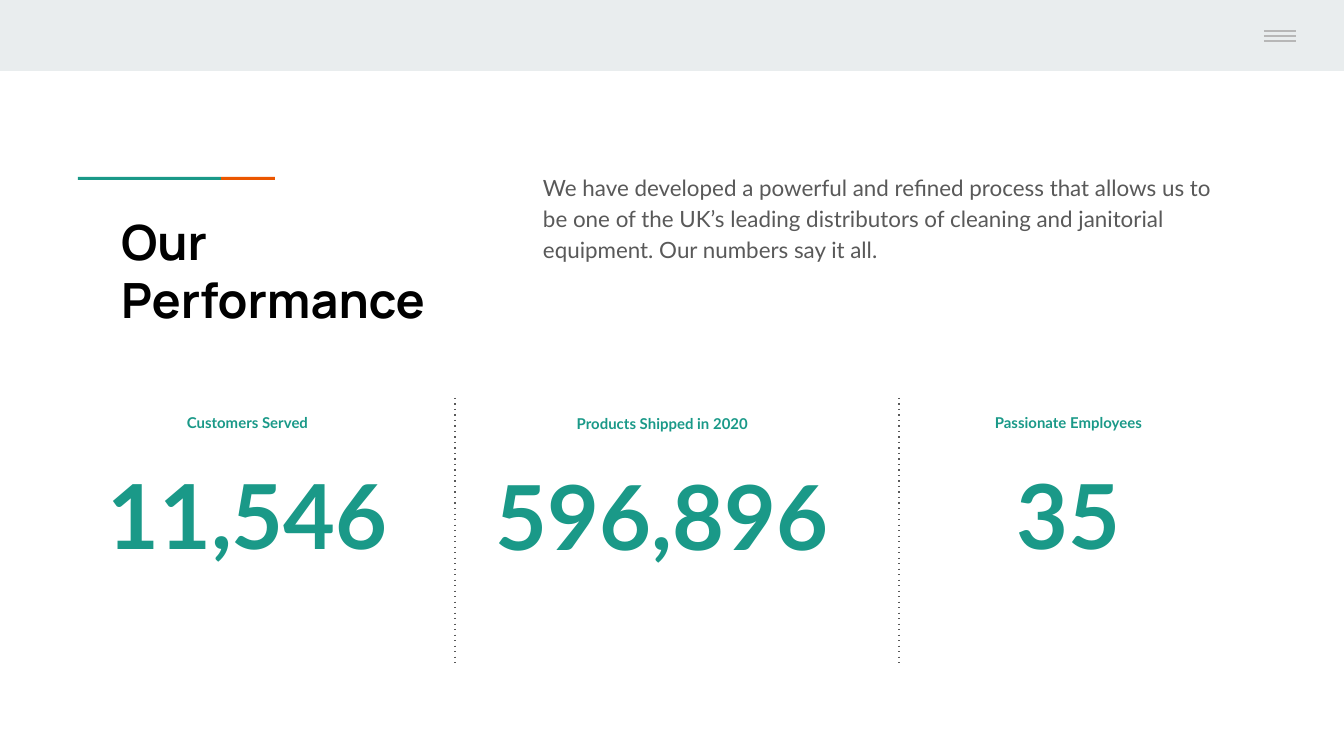
"""Build the "Our Performance" slide with three key figures."""
from dataclasses import dataclass

from lxml.etree import SubElement
from pptx import Presentation
from pptx.dml.color import RGBColor
from pptx.enum.shapes import MSO_CONNECTOR, MSO_SHAPE
from pptx.enum.text import MSO_ANCHOR, MSO_AUTO_SIZE, PP_ALIGN
from pptx.oxml.ns import qn
from pptx.shapes.autoshape import Shape
from pptx.slide import Slide
from pptx.util import Emu, Pt

SLIDE_WIDTH, SLIDE_HEIGHT = 1344, 756
EMU_PER_PX = 9144000 / SLIDE_WIDTH
INSET = 13

BAND = RGBColor(0xE9, 0xED, 0xEE)
TEAL = RGBColor(0x1A, 0x99, 0x88)
ORANGE = RGBColor(0xEB, 0x56, 0x00)
MENU_GRAY = RGBColor(0xB7, 0xB7, 0xB7)
TEXT_GRAY = RGBColor(0x59, 0x59, 0x59)
BLACK = RGBColor(0x00, 0x00, 0x00)


@dataclass(frozen=True)
class Box:
    left: int
    top: int
    width: int
    height: int


@dataclass(frozen=True)
class TextStyle:
    font: str
    size: int
    color: RGBColor
    bold: bool = False
    align: PP_ALIGN = PP_ALIGN.LEFT
    anchor: MSO_ANCHOR = MSO_ANCHOR.TOP
    line_spacing: float = 1.15
    space_after: int = 16


@dataclass(frozen=True)
class Metric:
    label: str
    value: str
    center: int
    label_top: int
    value_width: int


TITLE = TextStyle("Manrope", 26, BLACK, bold=True, anchor=MSO_ANCHOR.MIDDLE,
                  line_spacing=1.0, space_after=0)
BODY = TextStyle("Lato", 12, TEXT_GRAY)
LABEL = TextStyle("Lato", 8, TEAL, bold=True, align=PP_ALIGN.CENTER)
VALUE = TextStyle("Lato", 48, TEAL, bold=True, align=PP_ALIGN.CENTER)

METRICS = (
    Metric("Customers Served", "11,546", 247, 398, 339),
    Metric("Products Shipped in 2020", "596,896", 662, 399, 368),
    Metric("Passionate Employees", "35", 1068, 398, 339),
)


def px(length: int) -> Emu:
    """Turn pixels into EMU."""
    return Emu(round(length * EMU_PER_PX))


def place(shape: Shape, box: Box) -> None:
    """Move and size a shape."""
    shape.left, shape.top = px(box.left), px(box.top)
    shape.width, shape.height = px(box.width), px(box.height)


def write(shape: Shape, text: str, style: TextStyle) -> None:
    """Fill a shape with one styled paragraph."""
    frame = shape.text_frame
    frame.word_wrap = True
    frame.auto_size = MSO_AUTO_SIZE.NONE
    frame.vertical_anchor = style.anchor
    frame.margin_left = frame.margin_right = px(INSET)
    frame.margin_top = frame.margin_bottom = px(INSET)
    paragraph = frame.paragraphs[0]
    paragraph.alignment = style.align
    paragraph.line_spacing = style.line_spacing
    paragraph.space_before = Pt(0)
    paragraph.space_after = Pt(style.space_after)
    run = paragraph.add_run()
    run.text = text
    run.font.name = style.font
    run.font.size = Pt(style.size)
    run.font.bold = style.bold
    run.font.color.rgb = style.color


def remove_bullet(shape: Shape) -> None:
    """Clear the bullet and indent of the first paragraph."""
    properties = shape.text_frame.paragraphs[0]._p.get_or_add_pPr()
    properties.set("marL", "0")
    properties.set("indent", "0")
    SubElement(properties, qn("a:buNone"))


def add_bar(slide: Slide, box: Box, color: RGBColor) -> None:
    """Draw a filled rectangle without outline."""
    bar = slide.shapes.add_shape(MSO_SHAPE.RECTANGLE, 0, 0, 0, 0)
    place(bar, box)
    bar.shadow.inherit = False
    bar.fill.solid()
    bar.fill.fore_color.rgb = color
    bar.line.fill.background()


def add_line(slide: Slide, start: tuple[int, int], end: tuple[int, int],
             color: RGBColor, dotted: bool = False) -> None:
    """Draw a thin straight line."""
    line = slide.shapes.add_connector(
        MSO_CONNECTOR.STRAIGHT, px(start[0]), px(start[1]), px(end[0]), px(end[1]))
    line.line.color.rgb = color
    line.line.width = Pt(0.75)
    properties = line._element.spPr
    if dotted:
        SubElement(properties.find(qn("a:ln")), qn("a:prstDash")).set("val", "dot")
    SubElement(properties, qn("a:effectLst"))


def add_text(slide: Slide, box: Box, text: str, style: TextStyle) -> None:
    """Draw a text box."""
    text_box = slide.shapes.add_textbox(0, 0, 0, 0)
    place(text_box, box)
    write(text_box, text, style)


def add_metric(slide: Slide, metric: Metric) -> None:
    """Draw a label with its large figure below."""
    label_width = 259
    add_text(slide, Box(metric.center - label_width // 2, metric.label_top, label_width, 34),
             metric.label, LABEL)
    add_text(slide, Box(metric.center - metric.value_width // 2, metric.label_top + 33,
                        metric.value_width, 140), metric.value, VALUE)


def main() -> None:
    """Build and save the presentation."""
    presentation = Presentation()
    presentation.slide_width, presentation.slide_height = px(SLIDE_WIDTH), px(SLIDE_HEIGHT)
    slide = presentation.slides.add_slide(presentation.slide_layouts[1])

    add_bar(slide, Box(0, 0, SLIDE_WIDTH, 71), BAND)
    add_bar(slide, Box(78, 177, 143, 3), TEAL)
    add_bar(slide, Box(221, 177, 54, 3), ORANGE)
    for y in (31, 36, 41):
        add_line(slide, (1264, y), (1296, y), MENU_GRAY)

    title, body = slide.shapes.title, slide.placeholders[1]
    place(title, Box(108, 194, 411, 152))
    write(title, "Our Performance", TITLE)
    place(body, Box(530, 157, 706, 152))
    remove_bullet(body)
    write(body, "We have developed a powerful and refined process that allows us to be one of "
                "the UK’s leading distributors of cleaning and janitorial equipment. "
                "Our numbers say it all.", BODY)

    for metric in METRICS:
        add_metric(slide, metric)
    for x in (455, 899):
        add_line(slide, (x, 398), (x, 666), TEXT_GRAY, dotted=True)

    presentation.save("out.pptx")


if __name__ == "__main__":
    main()
